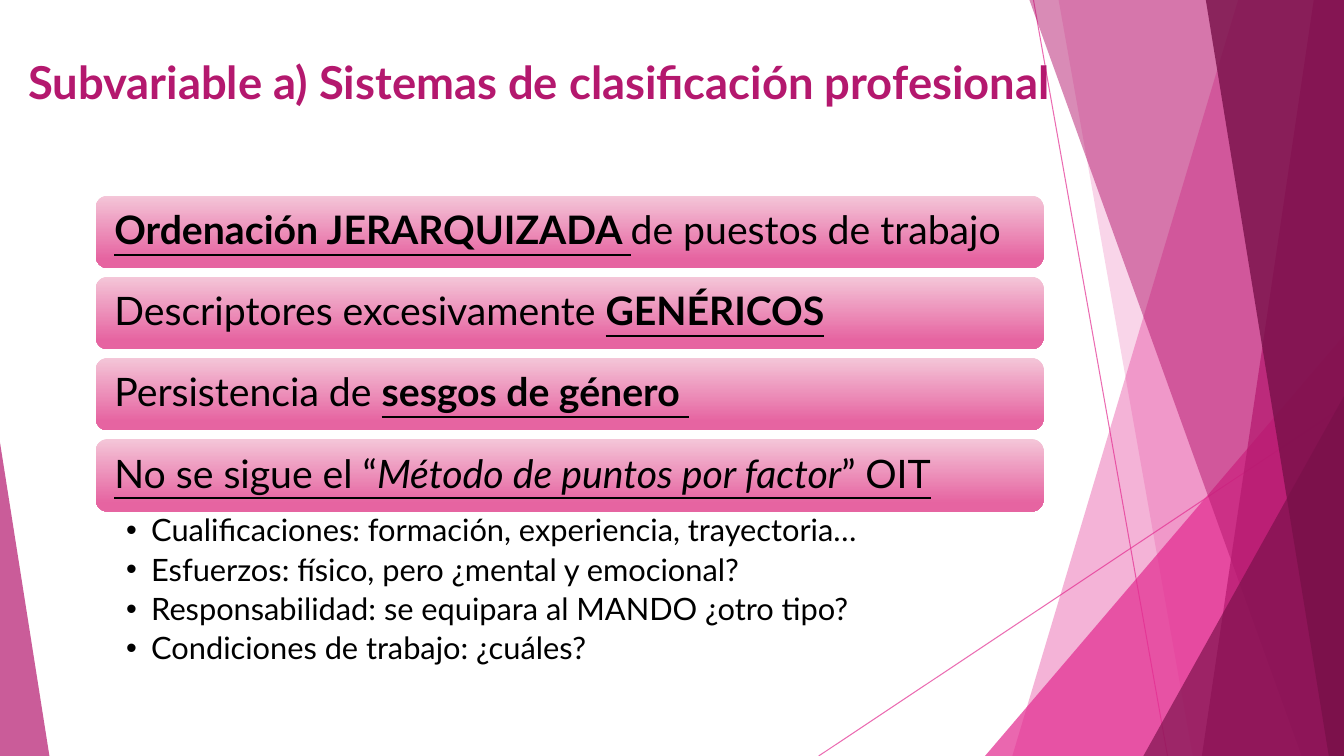
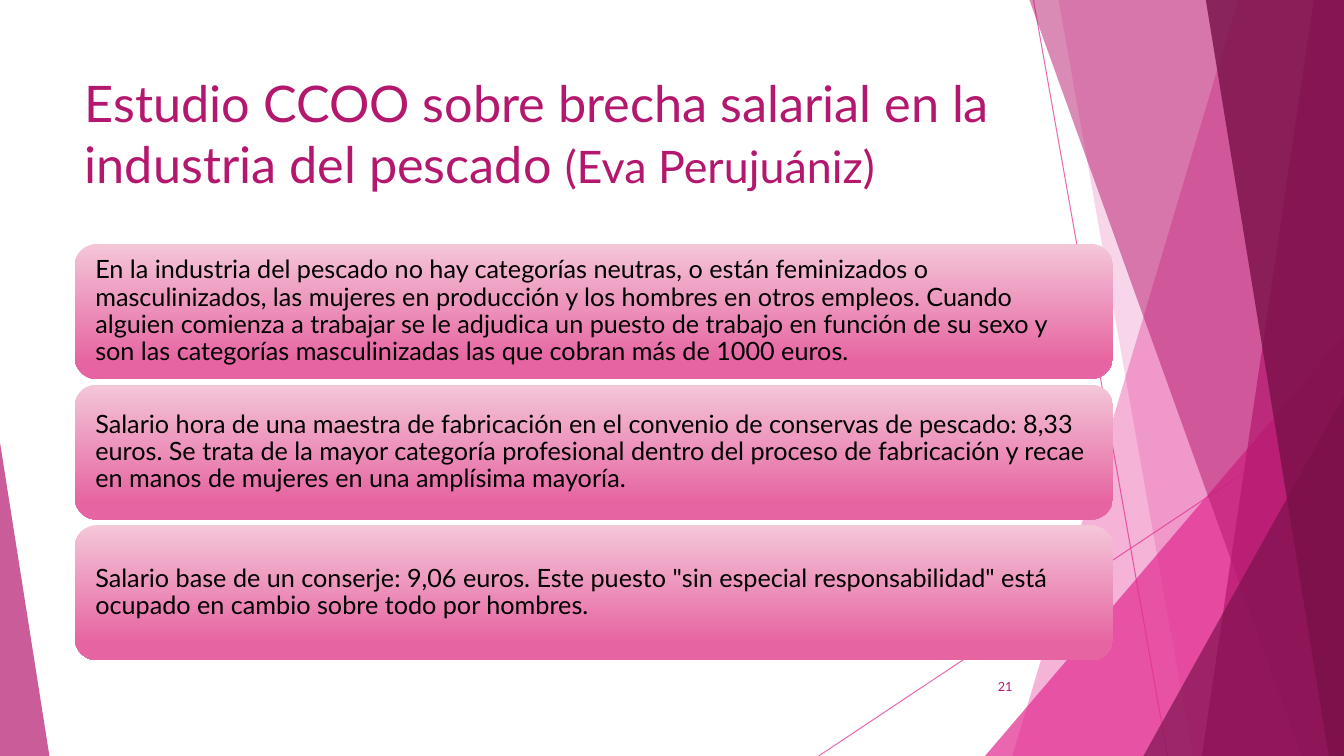
from dataclasses import dataclass
from lxml.etree import SubElement
from pptx import Presentation
from pptx.dml.color import RGBColor
from pptx.enum.shapes import MSO_CONNECTOR, MSO_SHAPE
from pptx.enum.text import MSO_ANCHOR, MSO_AUTO_SIZE, PP_ALIGN
from pptx.oxml.ns import qn
from pptx.util import Inches, Pt


@dataclass(frozen=True)
class Theme:
    font: str = "Lato"
    pink: str = "E32D91"
    magenta: str = "B4186E"
    plum: str = "781049"
    box_top: str = "F4C6D8"
    box_bottom: str = "E664A1"
    ink: str = "000000"
    title: float = 36
    title_small: float = 32
    title_bold: float = 32.4
    heading: float = 28
    bullet: float = 22
    text: float = 18
    number: float = 9


T = Theme()


def write(p, text, size, color=T.ink, style=""):
    r = p.add_run()
    r.text = text
    r.font.name = T.font
    r.font.size = Pt(size)
    r.font.color.rgb = RGBColor.from_string(color)
    r.font.bold = "b" in style
    r.font.italic = "i" in style
    r.font.underline = "u" in style


def paint(fill, color, alpha):
    fill.solid()
    fill.fore_color.rgb = RGBColor.from_string(color)
    clr = fill._xPr.find(".//" + qn("a:srgbClr"))
    SubElement(clr, qn("a:alpha")).set("val", str(alpha * 1000))


prs = Presentation()
prs.slide_width = Inches(13.33)
prs.slide_height = Inches(7.5)
W, H = 13.33, 7.5

slides = [
    {
        "layout": 1,
        "title_at": (0.18, 0.49, 11.62, 0.75),
        "title": [("Subvariable a) Sistemas de clasificación profesional", T.title_bold, "b")],
        "grid": (0.95, 1.94, 9.4, 0.72, 0.805),
        "inset": 0.15,
        "size": T.heading,
        "boxes": [
            [("Ordenación JERARQUIZADA ", "bu"), ("de puestos de trabajo", "")],
            [("Descriptores excesivamente ", ""), ("GENÉRICOS", "bu")],
            [("Persistencia de ", ""), ("sesgos de género ", "bu")],
            [("No se sigue el “", "u"), ("Método de puntos por factor", "iu"), ("” OIT", "u")],
        ],
    },
    {
        "layout": 5,
        "title_at": (0.74, 0.67, 9.4, 1.44),
        "title": [
            ("Estudio CCOO sobre brecha salarial en la industria del pescado ", T.title, ""),
            ("(Eva Perujuániz)", T.title_small, ""),
        ],
        "grid": (0.74, 2.42, 10.3, 1.34, 1.395),
        "inset": 0.14,
        "size": T.text,
        "boxes": [
            [("En la industria del pescado no hay categorías neutras, o están feminizados o "
              "masculinizados, las mujeres en producción y los hombres en otros empleos. Cuando "
              "alguien comienza a trabajar se le adjudica un puesto de trabajo en función de su "
              "sexo y son las categorías masculinizadas las que cobran más de 1000 euros.", "")],
            [("Salario hora de una maestra de fabricación en el convenio de conservas de pescado: "
              "8,33 euros. Se trata de la mayor categoría profesional dentro del proceso de "
              "fabricación y recae en manos de mujeres en una amplísima mayoría.", "")],
            [('Salario base de un conserje: 9,06 euros. Este puesto "sin especial '
              'responsabilidad" está ocupado en cambio sobre todo por hombres.', "")],
        ],
    },
]

for data in slides:
    s = prs.slides.add_slide(prs.slide_layouts[data["layout"]])
    title = s.shapes.title
    title.left, title.top, title.width, title.height = map(Inches, data["title_at"])
    tf = title.text_frame
    tf.auto_size = MSO_AUTO_SIZE.NONE
    tf.vertical_anchor = MSO_ANCHOR.TOP
    tf.paragraphs[0].alignment = PP_ALIGN.LEFT
    for text, size, style in data["title"]:
        write(tf.paragraphs[0], text, size, T.magenta, style)

    left, top, width, height, step = data["grid"]
    for i, runs in enumerate(data["boxes"]):
        box = s.shapes.add_shape(MSO_SHAPE.ROUNDED_RECTANGLE, Inches(left), Inches(top + i * step),
                                 Inches(width), Inches(height))
        box.shadow.inherit = False
        box.line.fill.background()
        box.fill.gradient()
        box.fill.gradient_angle = 270
        for stop, color, pos in zip(box.fill.gradient_stops, (T.box_top, T.box_bottom), (0, 0.88)):
            stop.color.rgb = RGBColor.from_string(color)
            stop.position = pos
        tf = box.text_frame
        tf.word_wrap = True
        tf.vertical_anchor = MSO_ANCHOR.MIDDLE
        tf.margin_left = tf.margin_right = Inches(data["inset"])
        tf.margin_top = tf.margin_bottom = Inches(data["inset"])
        p = tf.paragraphs[0]
        p.alignment = PP_ALIGN.LEFT
        p.line_spacing = 0.9
        for text, style in runs:
            write(p, text, data["size"], style=style)

first, last = prs.slides

body = first.placeholders[1]
body.left, body.top, body.width, body.height = map(Inches, (0.95, 5.07, 9.4, 1.69))
tf = body.text_frame
tf.auto_size = MSO_AUTO_SIZE.NONE
tf.margin_left, tf.margin_right = Inches(0.3), Inches(0.22)
tf.margin_top = tf.margin_bottom = Inches(0.04)
factors = [
    "Cualificaciones: formación, experiencia, trayectoria…",
    "Esfuerzos: físico, pero ¿mental y emocional?",
    "Responsabilidad: se equipara al MANDO ¿otro tipo?",
    "Condiciones de trabajo: ¿cuáles?",
]
for i, factor in enumerate(factors):
    p = tf.add_paragraph() if i else tf.paragraphs[0]
    p.line_spacing = 0.9
    p.space_before = Pt(0)
    p.space_after = Pt(4.4)
    pPr = p._p.get_or_add_pPr()
    pPr.set("marL", str(Inches(0.25)))
    pPr.set("indent", str(-Inches(0.25)))
    SubElement(pPr, qn("a:buChar")).set("char", "•")
    write(p, factor, T.bullet)

number = last.shapes.add_textbox(Inches(9.39), Inches(6.61), Inches(0.75), Inches(0.4))
tf = number.text_frame
tf.word_wrap = True
tf.vertical_anchor = MSO_ANCHOR.MIDDLE
tf.paragraphs[0].alignment = PP_ALIGN.RIGHT
write(tf.paragraphs[0], "21", T.number, T.magenta)

decor = []
for ends in [(10.25, 0, 11.58, H), (W, 4.03, 8.12, H)]:
    line = first.shapes.add_connector(MSO_CONNECTOR.STRAIGHT, *map(Inches, ends))
    line.line.width = Pt(0.75)
    paint(line.line.fill, T.pink, 70)
    SubElement(line.element.spPr, qn("a:effectLst"))
    decor.append(line)

facets = [
    ("band", (12.28, 10.04), T.pink, 36),
    ("band", (10.5, 11.83), T.pink, 20),
    ("triangle", (9.77, 3.33, 3.56, 1), T.pink, 72),
    ("band", (10.21, 12.91), T.magenta, 50),
    ("band", (13.03, 11.92), T.magenta, 70),
    ("band", (11.96, 13.18), T.plum, 80),
    ("triangle", (11.34, 3.93, 1.99, 1), T.plum, 66),
    ("triangle", (0, 4.39, 0.49, 0), T.magenta, 70),
]
for kind, geometry, color, alpha in facets:
    if kind == "band":
        upper, lower = geometry
        outline = first.shapes.build_freeform(Inches(upper), 0)
        outline.add_line_segments([(Inches(x), Inches(y)) for x, y in [(W, 0), (W, H), (lower, H)]])
        facet = outline.convert_to_shape()
    else:
        left, top, width, apex = geometry
        facet = first.shapes.add_shape(MSO_SHAPE.ISOSCELES_TRIANGLE, Inches(left), Inches(top),
                                       Inches(width), Inches(H - top))
        facet.adjustments[0] = apex
    facet.shadow.inherit = False
    facet.line.fill.background()
    paint(facet.fill, color, alpha)
    decor.append(facet)

master = prs.slide_master.shapes.element
for i, shape in enumerate(decor):
    shape.element.xpath(".//p:cNvPr")[0].set("id", str(100 + i))
    master.insert(2 + i, shape.element)

prs.save("out.pptx")
